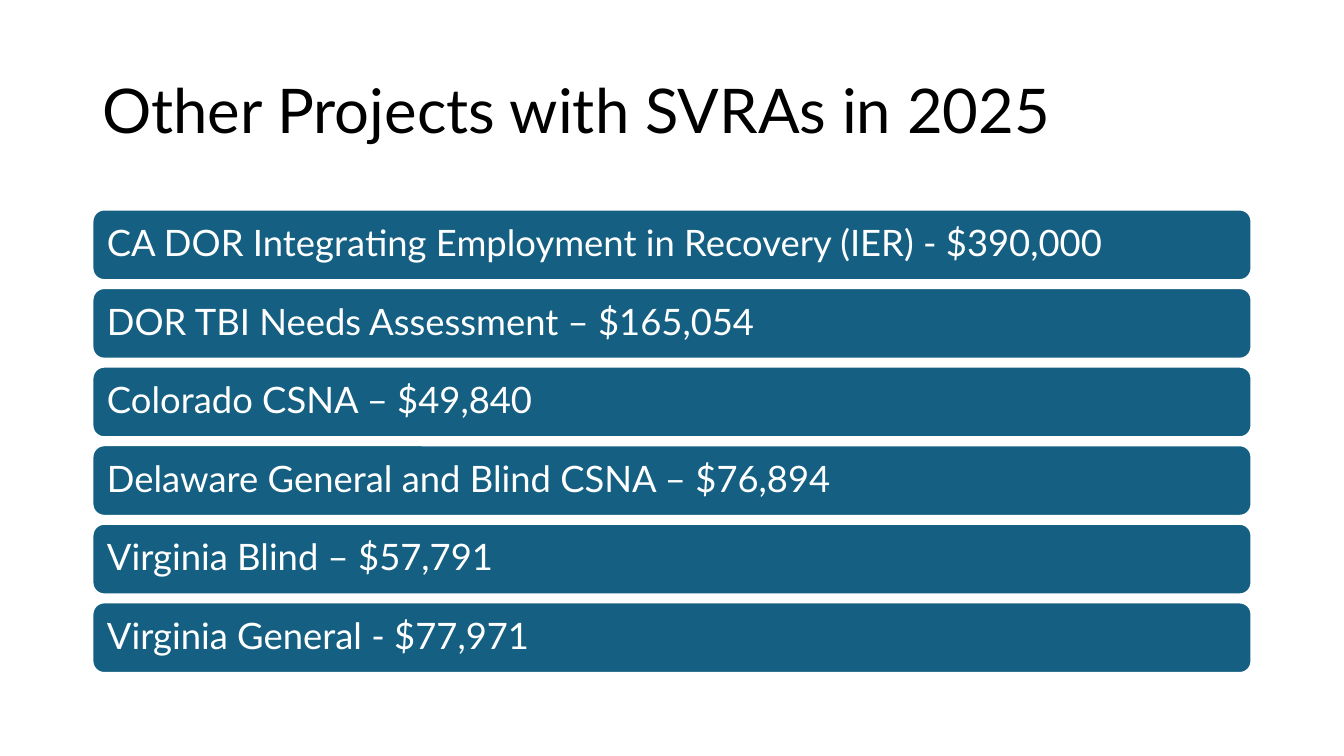
import pptx
import pptx.dml.color
import pptx.enum.shapes
import pptx.enum.text
import pptx.util

Cm = pptx.util.Cm
FONT = "Lato"
BLACK, WHITE, TEAL = "000000", "FFFFFF", "156082"
PROJECTS = [
    "CA DOR Integrating Employment in Recovery (IER) - $390,000",
    "DOR TBI Needs Assessment – $165,054",
    "Colorado CSNA – $49,840",
    "Delaware General and Blind CSNA – $76,894",
    "Virginia Blind – $57,791",
    "Virginia General - $77,971",
]


def color(hex_string):
    return pptx.dml.color.RGBColor.from_string(hex_string)


def write_text(shape, text, *, size, hex_color, inset):
    """Fill a shape with one left-aligned, vertically centred paragraph."""
    frame = shape.text_frame
    frame.word_wrap = True
    frame.vertical_anchor = pptx.enum.text.MSO_ANCHOR.MIDDLE
    frame.margin_left = frame.margin_right = inset
    frame.margin_top = frame.margin_bottom = inset
    paragraph = frame.paragraphs[0]
    paragraph.alignment = pptx.enum.text.PP_ALIGN.LEFT
    paragraph.line_spacing = 0.9
    run = paragraph.add_run()
    run.text = text
    run.font.name = FONT
    run.font.size = pptx.util.Pt(size)
    run.font.color.rgb = color(hex_color)


def add_title(slide, text, left, top, width, height):
    title = slide.shapes.add_textbox(left, top, width, height)
    write_text(title, text, size=44, hex_color=BLACK, inset=Cm(0.25))


def add_project_bars(slide, projects, left, top, width, height):
    """Stack one rounded bar per project, evenly spaced over the given box."""
    gap = Cm(0.2)
    bar_height = (height - gap * (len(projects) - 1)) // len(projects)
    for index, project in enumerate(projects):
        bar = slide.shapes.add_shape(
            pptx.enum.shapes.MSO_SHAPE.ROUNDED_RECTANGLE,
            left, top + index * (bar_height + gap), width, bar_height)
        bar.shadow.inherit = False
        bar.fill.solid()
        bar.fill.fore_color.rgb = color(TEAL)
        bar.line.color.rgb = color(WHITE)
        bar.line.width = pptx.util.Pt(1.5)
        write_text(bar, project, size=26, hex_color=WHITE, inset=Cm(0.28))


def main():
    presentation = pptx.Presentation()
    presentation.slide_width = Cm(33.87)
    presentation.slide_height = Cm(19.05)
    slide = presentation.slides.add_slide(presentation.slide_layouts[6])
    left, width = Cm(2.33), Cm(29.21)
    add_title(slide, "Other Projects with SVRAs in 2025", left, Cm(1.01), width, Cm(3.68))
    add_project_bars(slide, PROJECTS, left, Cm(5.28), width, Cm(11.68))
    presentation.save("out.pptx")


if __name__ == "__main__":
    main()
